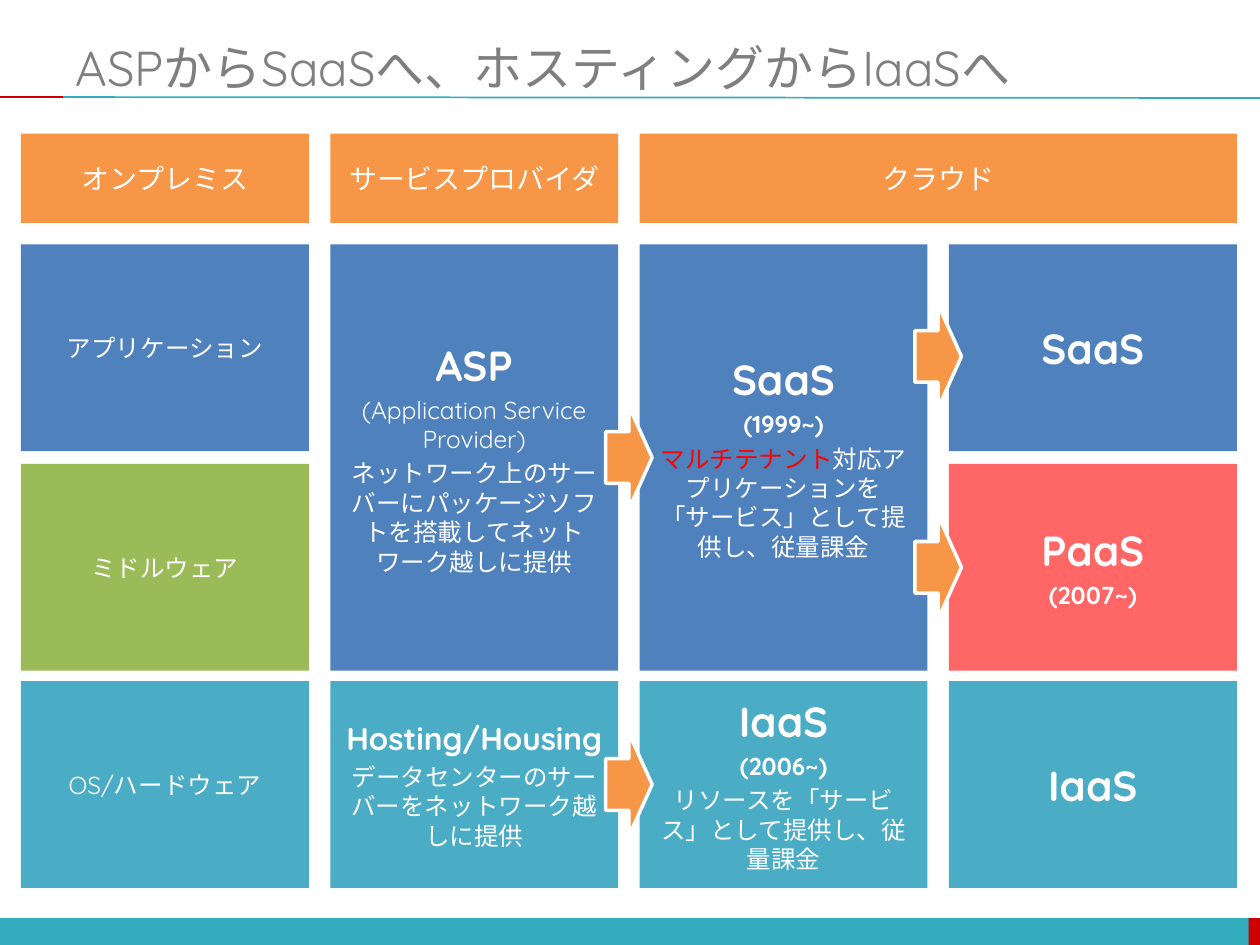
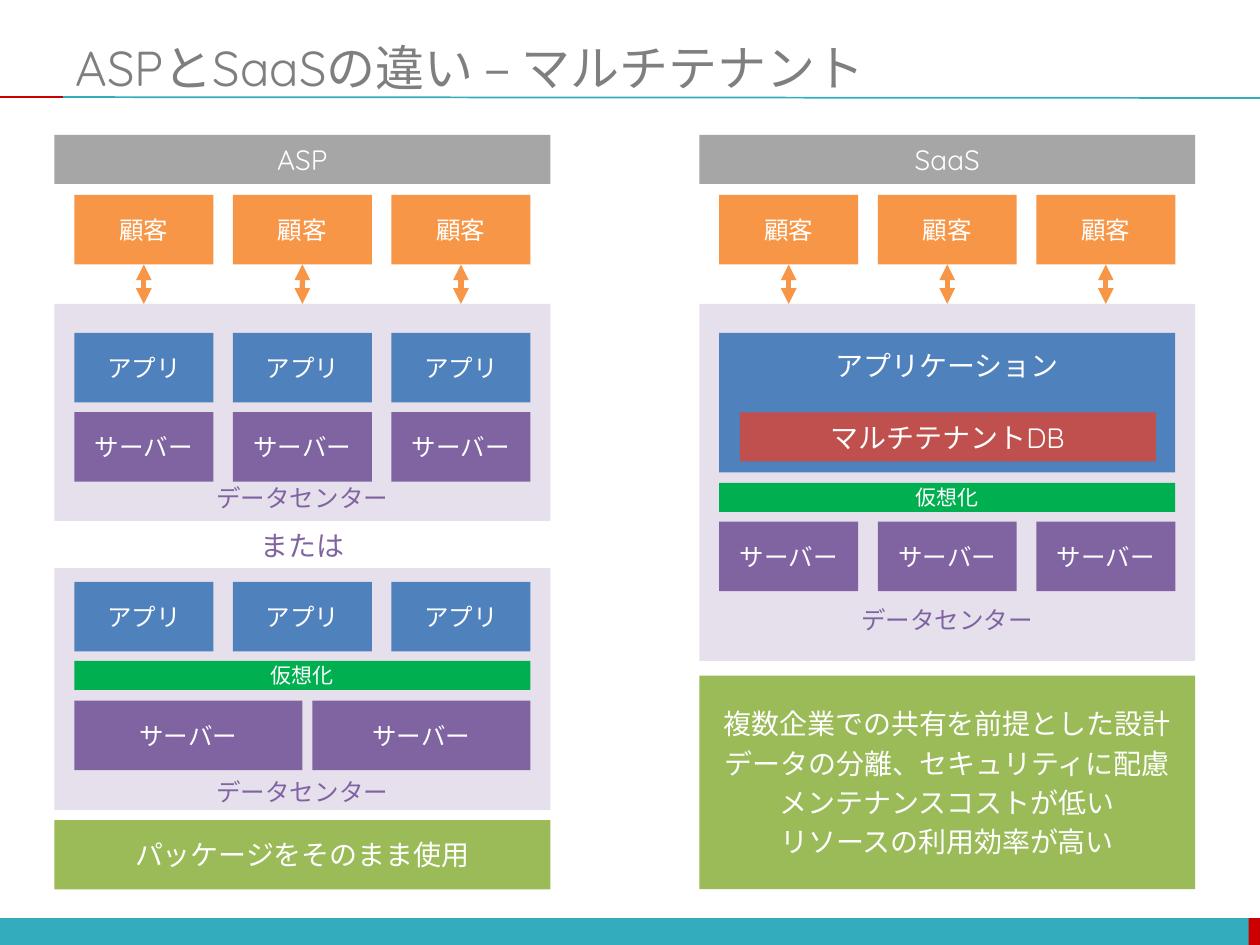
from pptx import Presentation
from pptx.dml.color import RGBColor
from pptx.enum.lang import MSO_LANGUAGE_ID
from pptx.enum.shapes import MSO_CONNECTOR, MSO_SHAPE
from pptx.enum.text import MSO_ANCHOR, PP_ALIGN
from pptx.oxml.ns import qn
from pptx.util import Pt
from lxml.etree import SubElement

FONT = "Quicksand"
WHITE = RGBColor(0xFF, 0xFF, 0xFF)
GRAY = RGBColor(0x7F, 0x7F, 0x7F)
SILVER = RGBColor(0xA6, 0xA6, 0xA6)
TEAL = RGBColor(0x33, 0xAC, 0xBD)
CRIMSON = RGBColor(0xCC, 0x00, 0x00)
RED = RGBColor(0xFF, 0x00, 0x00)
BRICK = RGBColor(0xC0, 0x50, 0x4D)
CORAL = RGBColor(0xFF, 0x66, 0x66)
ORANGE = RGBColor(0xF7, 0x96, 0x46)
BLUE = RGBColor(0x4F, 0x81, 0xBD)
AQUA = RGBColor(0x4B, 0xAC, 0xC6)
OLIVE = RGBColor(0x9B, 0xBB, 0x59)
GREEN = RGBColor(0x00, 0xB0, 0x50)
PURPLE = RGBColor(0x80, 0x64, 0xA2)
LILAC = RGBColor(0xE6, 0xE0, 0xEC)

MIDDLE, TOP, BOTTOM = MSO_ANCHOR.MIDDLE, MSO_ANCHOR.TOP, MSO_ANCHOR.BOTTOM


# Shared parts
def write(shape, paras, align=PP_ALIGN.CENTER, anchor=MIDDLE, inset=3.6):
    """Fill a shape with paragraphs, each a list of (text, size, bold, colour)."""
    frame = shape.text_frame
    frame.word_wrap = True
    frame.vertical_anchor = anchor
    frame.margin_top = Pt(inset if anchor == TOP else 3.6)
    frame.margin_bottom = Pt(inset if anchor == BOTTOM else 3.6)
    for i, runs in enumerate(paras):
        para = frame.add_paragraph() if i else frame.paragraphs[0]
        para.alignment = align
        para.space_before = Pt(0.2 * runs[0][1] if i else 0)
        for words, size, bold, color in runs:
            run = para.add_run()
            run.text = words
            font = run.font
            font.name, font.size, font.bold = FONT, Pt(size), bold
            font.color.rgb = color
            font.language_id = MSO_LANGUAGE_ID.JAPANESE


def line(words, size=14, bold=False, color=WHITE):
    return [(words, size, bold, color)]


def block(slide, box, fill, *paras, kind=MSO_SHAPE.RECTANGLE, **style):
    shape = slide.shapes.add_shape(kind, *map(Pt, box))
    shape.shadow.inherit = False
    shape.fill.solid()
    shape.fill.fore_color.rgb = fill
    shape.line.fill.background()
    write(shape, paras, **style)
    return shape


def label(slide, box, *paras, **style):
    write(slide.shapes.add_textbox(*map(Pt, box)), paras, **style)


def rule(slide, start, end, color, width):
    link = slide.shapes.add_connector(
        MSO_CONNECTOR.STRAIGHT, *map(Pt, start + end))
    link.line.color.rgb = color
    link.line.width = Pt(width)
    SubElement(link._element.spPr, qn("a:effectLst"))
    return link


def frame(deck, title):
    slide = deck.slides.add_slide(deck.slide_layouts[6])
    # Footer band
    block(slide, (0, 524.6, 720, 15.6), TEAL)
    block(slide, (713.5, 524.6, 6.5, 15.6), CRIMSON)
    # Title and its underline
    rule(slide, (36, 55.5), (720, 56), TEAL, 1)
    rule(slide, (0, 55.5), (36, 55.5), CRIMSON, 1)
    label(slide, (36, 21.6, 684, 33.4), line(title, 28, color=GRAY),
          align=PP_ALIGN.LEFT)
    return slide


# Slide 1: grid of layers by delivery model
def grid(slide, left, top):
    step, wide, tall = 176.76, 164.5, 118.2
    rows = [top + 63.2, top + 188.7, top + 312.8]
    both = rows[1] + tall - rows[0]

    def cell(col, row, fill, *paras, high=tall):
        block(slide, (left + col * step, rows[row], wide, high), fill, *paras)

    def arrow(col, mid):
        x = left + col * step - (step - wide) / 2
        shape = block(slide, (x - 13.3, mid - 29.5, 26.6, 59), ORANGE,
                      kind=MSO_SHAPE.RIGHT_ARROW)
        shape.line.color.rgb = WHITE
        shape.line.width = Pt(2)

    # Column heads
    for col, span, name in ((0, 1, "オンプレミス"), (1, 1, "サービスプロバイダ"),
                            (2, 2, "クラウド")):
        block(slide, (left + col * step, top, wide + (span - 1) * step, 51),
              ORANGE, line(name, 16))

    # On premises
    cell(0, 0, BLUE, line("アプリケーション"))
    cell(0, 1, OLIVE, line("ミドルウェア"))
    cell(0, 2, AQUA, line("OS/ハードウェア"))

    # Service provider
    cell(1, 0, BLUE, line("ASP", 24, True),
         line("(Application Service Provider)"),
         line("ネットワーク上のサーバーにパッケージソフトを搭載してネットワーク越しに提供"),
         high=both)
    cell(1, 2, AQUA, line("Hosting/Housing", 18, True),
         line("データセンターのサーバーをネットワーク越しに提供"))

    # Cloud
    cell(2, 0, BLUE, line("SaaS", 24, True), line("(1999~)", bold=True),
         line("マルチテナント", color=RED)
         + line("対応アプリケーションを「サービス」として提供し、従量課金"),
         high=both)
    cell(2, 2, AQUA, line("IaaS", 24, True), line("(2006~)", bold=True),
         line("リソースを「サービス」として提供し、従量課金"))
    cell(3, 0, BLUE, line("SaaS", 24, True))
    cell(3, 1, CORAL, line("PaaS", 24, True), line("(2007~)", bold=True))
    cell(3, 2, AQUA, line("IaaS", 24, True))

    # Arrows across the gaps
    arrow(3, rows[0] + tall / 2 + 5)
    arrow(3, rows[1] + tall / 2)
    arrow(2, rows[0] + both / 2)
    arrow(2, rows[2] + tall / 2)


# Slide 2: two lanes
LANE, PAD, INNER, UNIT, HIGH = 283.4, 11.4, 260.6, 79.4, 39.7


def trio(slide, left, top, fill, name):
    step = (INNER - UNIT) / 2
    return [block(slide, (left + PAD + i * step, top, UNIT, HIGH), fill,
                  line(name)) for i in range(3)]


def center(slide, left, top, high, inset):
    return block(slide, (left, top, LANE, high), LILAC,
                 line("データセンター", color=PURPLE),
                 anchor=BOTTOM, inset=inset)


def virtual(slide, left, top):
    block(slide, (left + PAD, top, INNER, 16.6), GREEN, line("仮想化", 12))


def clients(slide, left, top, name, hall):
    """Lane head and customers, each tied to the data centre below."""
    block(slide, (left, top, LANE, 28), SILVER, line(name, 16))
    for i, client in enumerate(trio(slide, left, top + 34.3, ORANGE, "顧客")):
        mid = left + PAD + UNIT / 2 + i * (INNER - UNIT) / 2
        link = rule(slide, (mid, top + 74), (mid, top + 96.6), ORANGE, 3)
        link.begin_connect(client, 2)
        if i == 1:
            link.end_connect(hall, 0)
        for end in ("a:headEnd", "a:tailEnd"):
            SubElement(link.line._get_or_add_ln(), qn(end), type="triangle")


def asp(slide, left, top):
    # One server for each customer
    hall = center(slide, left, top + 96.6, 124, 4.6)
    clients(slide, left, top, "ASP", hall)
    trio(slide, left, top + 113.1, BLUE, "アプリ")
    trio(slide, left, top + 158.4, PURPLE, "サーバー")
    label(slide, (left, top + 221, LANE, 26.6),
          line("または", 16, color=PURPLE))
    # Shared servers
    center(slide, left, top + 247.6, 138.2, 2)
    trio(slide, left, top + 255.4, BLUE, "アプリ")
    virtual(slide, left, top + 300.6)
    for x, wide in ((0, 130.3), (136, INNER - 136)):
        block(slide, (left + PAD + x, top + 323.3, wide, HIGH), PURPLE,
              line("サーバー"))
    block(slide, (left, top + 391.5, LANE, HIGH), OLIVE,
          line("パッケージをそのまま使用", 16))


def saas(slide, left, top):
    # One application on shared servers
    hall = center(slide, left, top + 96.6, 204, 15.4)
    clients(slide, left, top, "SaaS", hall)
    block(slide, (left + PAD, top + 113.1, INNER, 79.8), BLUE,
          line("アプリケーション", 16), anchor=TOP, inset=9)
    block(slide, (left + 2 * PAD + 0.4, top + 158.6, 237.7, 28), BRICK,
          line("マルチテナントDB", 16))
    virtual(slide, left, top + 198.8)
    trio(slide, left, top + 221, PURPLE, "サーバー")
    # Benefits
    notes = ("複数企業での共有を前提とした設計", "データの分離、セキュリティに配慮",
             "メンテナンスコストが低い", "リソースの利用効率が高い")
    block(slide, (left, top + 309, LANE, 122), OLIVE,
          *[line(note, 16) for note in notes])


def main():
    deck = Presentation()
    deck.slide_width, deck.slide_height = Pt(720), Pt(540)
    grid(frame(deck, "ASPからSaaSへ、ホスティングからIaaSへ"), 12, 76.4)
    slide = frame(deck, "ASPとSaaSの違い – マルチテナント")
    asp(slide, 31.1, 77.1)
    saas(slide, 399.6, 77.1)
    deck.save("out.pptx")


if __name__ == "__main__":
    main()
